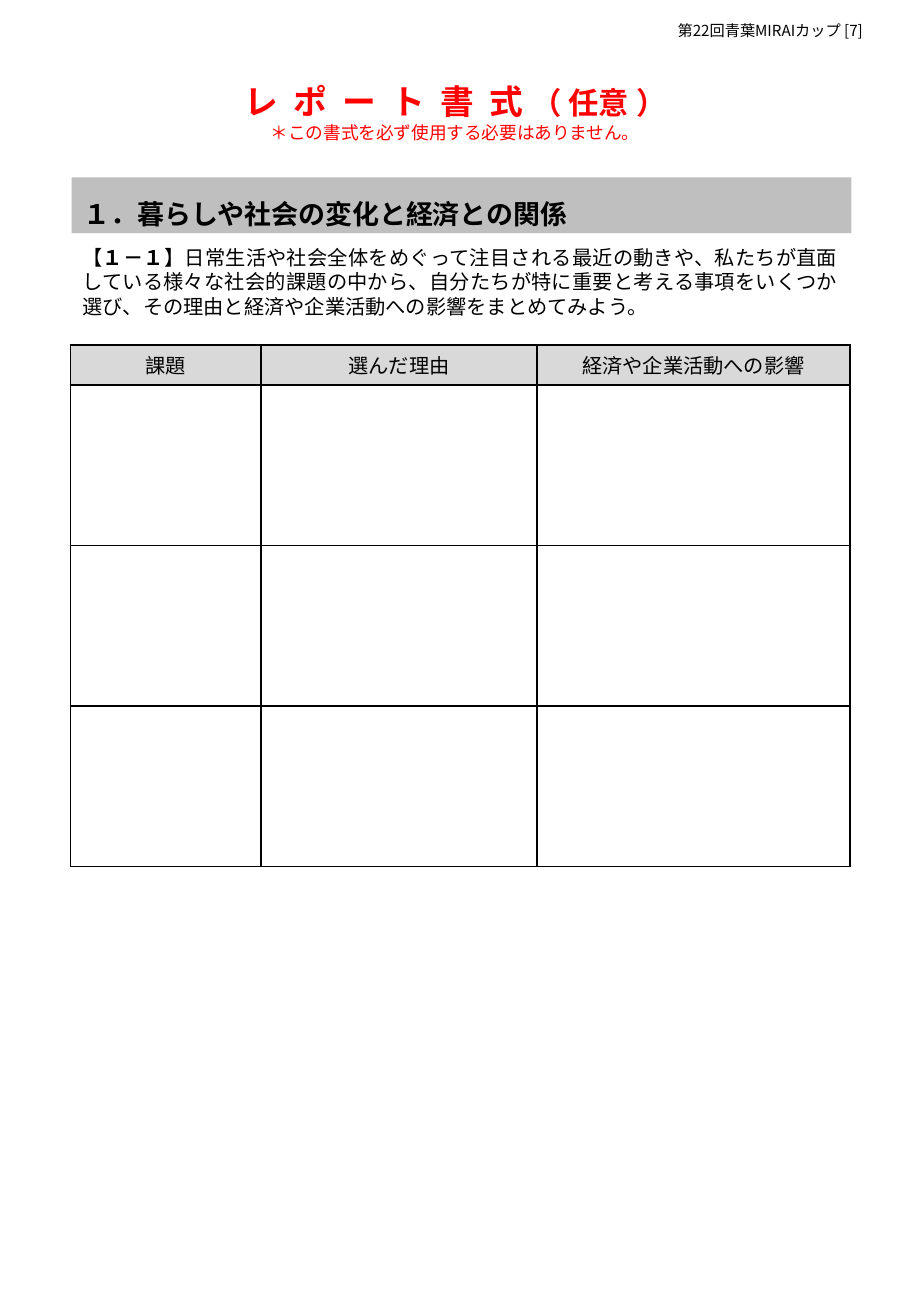
"""Build the report form page with its heading, task and answer table."""
from dataclasses import dataclass

from lxml.etree import SubElement
from pptx import Presentation
from pptx.dml.color import RGBColor
from pptx.enum.shapes import MSO_SHAPE
from pptx.enum.text import MSO_ANCHOR, MSO_AUTO_SIZE, PP_ALIGN
from pptx.oxml.ns import qn
from pptx.shapes.autoshape import Shape
from pptx.slide import Slide
from pptx.table import _Cell
from pptx.text.text import TextFrame
from pptx.util import Inches, Pt


@dataclass(frozen=True)
class Theme:
    """Colours, type sizes and font of the page."""
    font: str = "Noto Sans CJK JP"
    black: str = "000000"
    red: str = "FF0000"
    bar: str = "BFBFBF"
    header: str = "D9D9D9"
    title: float = 20
    title_suffix: float = 18
    section: float = 16
    body: float = 12
    note: float = 10.5
    page: float = 9
    border: float = 1


THEME = Theme()


@dataclass(frozen=True)
class Piece:
    """A stretch of text in one format."""
    text: str
    size: float = THEME.body
    bold: bool = False
    color: str = THEME.black
    tracking: float = 0


@dataclass(frozen=True)
class Line:
    """A paragraph made of pieces."""
    pieces: tuple[Piece, ...]
    align: PP_ALIGN = PP_ALIGN.LEFT
    spacing: float = 1.0


@dataclass(frozen=True)
class Block:
    """A text block with its place in inches."""
    left: float
    top: float
    width: float
    height: float
    lines: tuple[Line, ...]
    fill: str = ""


BLOCKS = (
    Block(0.58, 1.97, 6.42, 0.71, (Line((
        Piece("【"),
        Piece("１－１", bold=True),
        Piece("】日常生活や社会全体をめぐって注目される最近の動きや、私たちが直面している"
              "様々な社会的課題の中から、自分たちが特に重要と考える事項をいくつか選び、"
              "その理由と経済や企業活動への影響をまとめてみよう。"),
    ), PP_ALIGN.JUSTIFY),)),
    Block(0.59, 1.46, 6.42, 0.46, (Line((
        Piece("１．暮らしや社会の変化と経済との関係", THEME.section, True),
    ), spacing=1.5),), THEME.bar),
    Block(0.1, 0.45, 7.3, 0.78, (
        Line((
            Piece("レ ポ ー ト 書 ", THEME.title, True, THEME.red, 2.25),
            Piece("式 ", THEME.title, True, THEME.red),
            Piece("（ 任意 ）", THEME.title_suffix, True, THEME.red),
        ), PP_ALIGN.CENTER, 1.5),
        Line((
            Piece("＊この書式を必ず使用する必要はありません。", THEME.note, color=THEME.red),
        ), PP_ALIGN.CENTER),
    )),
    Block(5.48, 0.13, 2.02, 0.25, (Line((
        Piece("第22回青葉MIRAIカップ [7]", THEME.page),
    )),)),
)

HEADINGS = ("課題", "選んだ理由", "経済や企業活動への影響")
COLUMN_WIDTHS = (1.57, 2.27, 2.58)
ROW_HEIGHTS = (0.33, 1.32, 1.32, 1.32)


def write_lines(text_frame: TextFrame, lines: tuple[Line, ...]) -> None:
    """Fill a text frame with formatted paragraphs."""
    for index, line in enumerate(lines):
        paragraph = text_frame.add_paragraph() if index else text_frame.paragraphs[0]
        paragraph.alignment = line.align
        paragraph.line_spacing = line.spacing
        for piece in line.pieces:
            run = paragraph.add_run()
            run.text = piece.text
            run.font.name = THEME.font
            run.font.size = Pt(piece.size)
            run.font.bold = piece.bold
            run.font.color.rgb = RGBColor.from_string(piece.color)
            properties = run.font._element
            SubElement(properties, qn("a:ea"), typeface=THEME.font)
            if piece.tracking:
                properties.set("spc", str(round(piece.tracking * 100)))


def add_block(slide: Slide, block: Block) -> Shape:
    """Draw a text box, or a filled bar if the block has a fill."""
    place = [Inches(n) for n in (block.left, block.top, block.width, block.height)]
    if block.fill:
        shape = slide.shapes.add_shape(MSO_SHAPE.RECTANGLE, *place)
        shape.shadow.inherit = False
        shape.fill.solid()
        shape.fill.fore_color.rgb = RGBColor.from_string(block.fill)
        shape.line.fill.background()
        shape.text_frame.vertical_anchor = MSO_ANCHOR.MIDDLE
    else:
        shape = slide.shapes.add_textbox(*place)
    shape.text_frame.word_wrap = True
    shape.text_frame.auto_size = MSO_AUTO_SIZE.SHAPE_TO_FIT_TEXT
    write_lines(shape.text_frame, block.lines)
    return shape


def add_borders(cell: _Cell) -> None:
    """Rule all four sides of a cell."""
    properties = cell._tc.get_or_add_tcPr()
    for index, side in enumerate(("lnL", "lnR", "lnT", "lnB")):
        border = properties.makeelement(qn(f"a:{side}"), {"w": str(Pt(THEME.border))})
        fill = SubElement(border, qn("a:solidFill"))
        SubElement(fill, qn("a:srgbClr"), val=THEME.black)
        properties.insert(index, border)


def add_answer_table(slide: Slide) -> None:
    """Draw the table with a heading row and empty answer rows."""
    table = slide.shapes.add_table(
        len(ROW_HEIGHTS), len(COLUMN_WIDTHS), Inches(0.58), Inches(2.84),
        Inches(sum(COLUMN_WIDTHS)), Inches(sum(ROW_HEIGHTS))).table
    table.first_row = table.horz_banding = False
    for column, width in zip(table.columns, COLUMN_WIDTHS):
        column.width = Inches(width)
    for row, height in zip(table.rows, ROW_HEIGHTS):
        row.height = Inches(height)
    for cell in table.iter_cells():
        cell.fill.background()
        add_borders(cell)
    for cell, heading in zip(table.rows[0].cells, HEADINGS):
        cell.fill.solid()
        cell.fill.fore_color.rgb = RGBColor.from_string(THEME.header)
        cell.vertical_anchor = MSO_ANCHOR.MIDDLE
        cell.margin_left = cell.margin_right = Inches(0.04)
        cell.margin_top = cell.margin_bottom = Inches(0.04)
        write_lines(cell.text_frame, (Line((Piece(heading),), PP_ALIGN.CENTER),))


def main() -> None:
    """Build and save the page."""
    presentation = Presentation()
    presentation.slide_width = Inches(7.5)
    presentation.slide_height = Inches(10.83)
    slide = presentation.slides.add_slide(presentation.slide_layouts[6])
    task, *headings = BLOCKS
    add_block(slide, task)
    add_answer_table(slide)
    for block in headings:
        add_block(slide, block)
    presentation.save("out.pptx")


if __name__ == "__main__":
    main()
